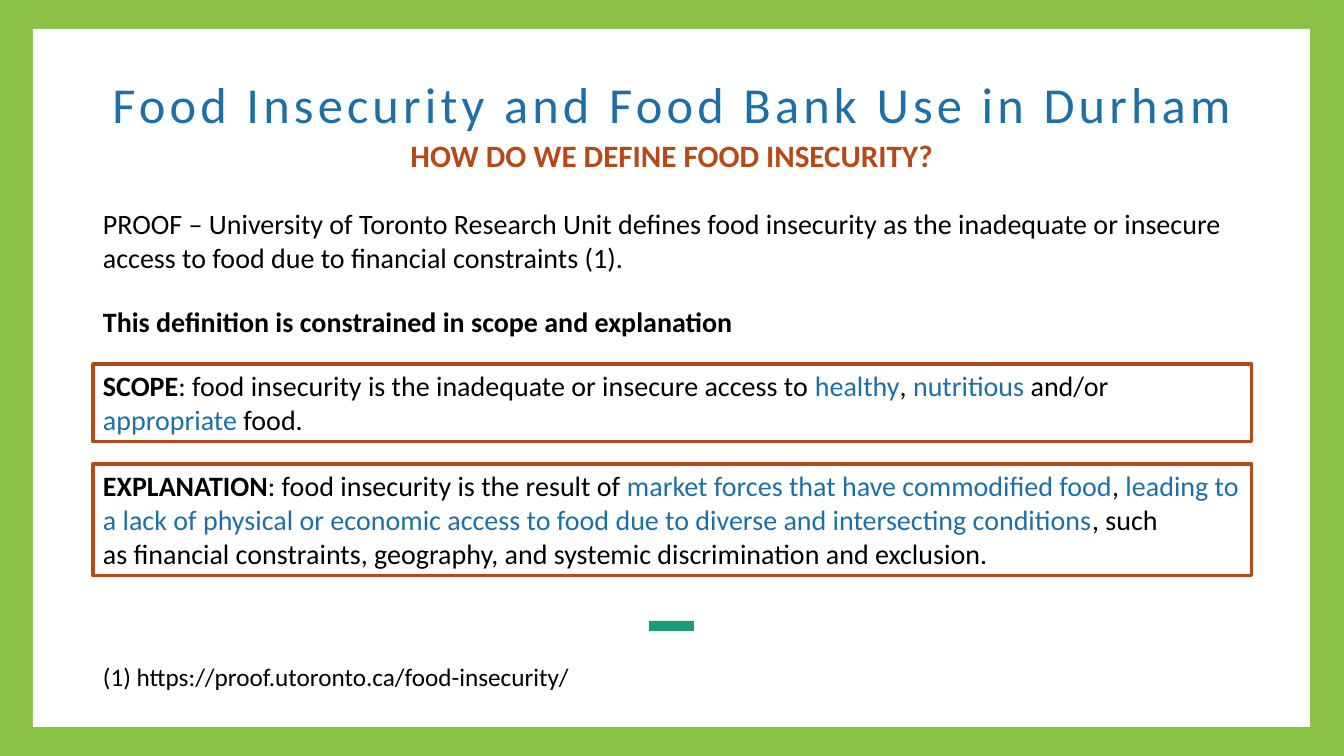
from pptx import Presentation
from pptx.dml.color import RGBColor
from pptx.enum.shapes import MSO_SHAPE
from pptx.enum.text import MSO_ANCHOR, MSO_AUTO_SIZE, PP_ALIGN
from pptx.util import Emu, Pt

EMU_PER_PX = 12192000 / 1344
LEFT, WIDTH = 93, 1159
NO_BREAK_SPACE = chr(160)


def px(length):
    return Emu(round(length * EMU_PER_PX))


def color(code):
    return RGBColor.from_string(code)


GREEN, WHITE, TEAL = "8BC145", "FFFFFF", "1D9A78"
BLUE, RUST, BLACK = "1D6FA9", "B74919", "000000"


def write(paragraph, text, size=20, fill=BLACK, bold=False, spacing=0):
    run = paragraph.add_run()
    run.text = text
    run.font.name = "Calibri"
    run.font.size = Pt(size)
    run.font.bold = bold
    run.font.color.rgb = color(fill)
    if spacing:
        run.font._element.set("spc", str(spacing * 100))


class FoodSlide:
    def __init__(self, presentation):
        self.slide = presentation.slides.add_slide(presentation.slide_layouts[0])
        background = self.slide.background.fill
        background.solid()
        background.fore_color.rgb = color(GREEN)

    def backdrop(self, left, top, width, height, fill):
        shape = self.slide.shapes.add_shape(
            MSO_SHAPE.RECTANGLE, px(left), px(top), px(width), px(height))
        shape.shadow.inherit = False
        shape.fill.solid()
        shape.fill.fore_color.rgb = color(fill)
        shape.line.fill.background()
        title = self.slide.shapes.title
        title._element.addprevious(shape._element)

    def heading(self, index, box, text, anchor, line_spacing, **style):
        shape = self.slide.placeholders[index]
        shape.left, shape.top, shape.width, shape.height = map(px, box)
        frame = shape.text_frame
        frame.word_wrap = True
        frame.auto_size = MSO_AUTO_SIZE.NONE
        frame.vertical_anchor = anchor
        paragraph = frame.paragraphs[0]
        paragraph.alignment = PP_ALIGN.CENTER
        paragraph.line_spacing = line_spacing
        paragraph.space_before = Pt(0)
        write(paragraph, text, **style)

    def passage(self, top, height, pieces, width=WIDTH, border=None, **style):
        shape = self.slide.shapes.add_textbox(px(LEFT), px(top), px(width), px(height))
        if border:
            shape.line.color.rgb = color(border)
            shape.line.width = Pt(2.25)
        frame = shape.text_frame
        frame.word_wrap = True
        frame.auto_size = MSO_AUTO_SIZE.SHAPE_TO_FIT_TEXT
        for text, emphasis in pieces:
            write(frame.paragraphs[0], text, **{**style, **emphasis})


def main():
    presentation = Presentation()
    presentation.slide_width, presentation.slide_height = px(1344), px(756)
    page = FoodSlide(presentation)
    plain, strong, accent = {}, {"bold": True}, {"fill": BLUE}

    page.backdrop(33, 29, 1277, 698, WHITE)
    page.backdrop(649, 621, 45, 10, TEAL)
    page.heading(0, (LEFT, 72, WIDTH, 70), "Food Insecurity and Food Bank Use in Durham",
                 MSO_ANCHOR.MIDDLE, 0.9, size=36, fill=BLUE, spacing=3)
    page.heading(1, (168, 142, 1008, 39), "HOW DO WE DEFINE FOOD INSECURITY?",
                 MSO_ANCHOR.TOP, 0.7, size=22.2, fill=RUST, bold=True)
    page.passage(202, 78, [
        ("PROOF – University of Toronto Research Unit defines food insecurity as the "
         "inadequate or insecure access to food due to financial constraints (1).", plain)])
    page.passage(300, 44, [
        ("This definition is constrained in scope and explanation", strong)])
    page.passage(364, 78, [
        ("SCOPE", strong),
        (": food insecurity is the inadequate or insecure access to ", plain),
        ("healthy", accent), (", ", plain), ("nutritious", accent),
        (" and/or ", plain), ("appropriate", accent), (" food.", plain)], border=RUST)
    page.passage(464, 112, [
        ("EXPLANATION", strong),
        (": food insecurity is the result of ", plain),
        ("market forces that have commodified food", accent), (", ", plain),
        ("leading to a lack of physical or economic access to food due to diverse "
         "and intersecting conditions", accent),
        (f", such as{NO_BREAK_SPACE}financial constraints, geography, and systemic "
         "discrimination and exclusion.", plain)], border=RUST)
    page.passage(656, 40, [("(1) https://proof.utoronto.ca/food-insecurity/", plain)],
                 width=525, size=18)
    presentation.save("out.pptx")


if __name__ == "__main__":
    main()
